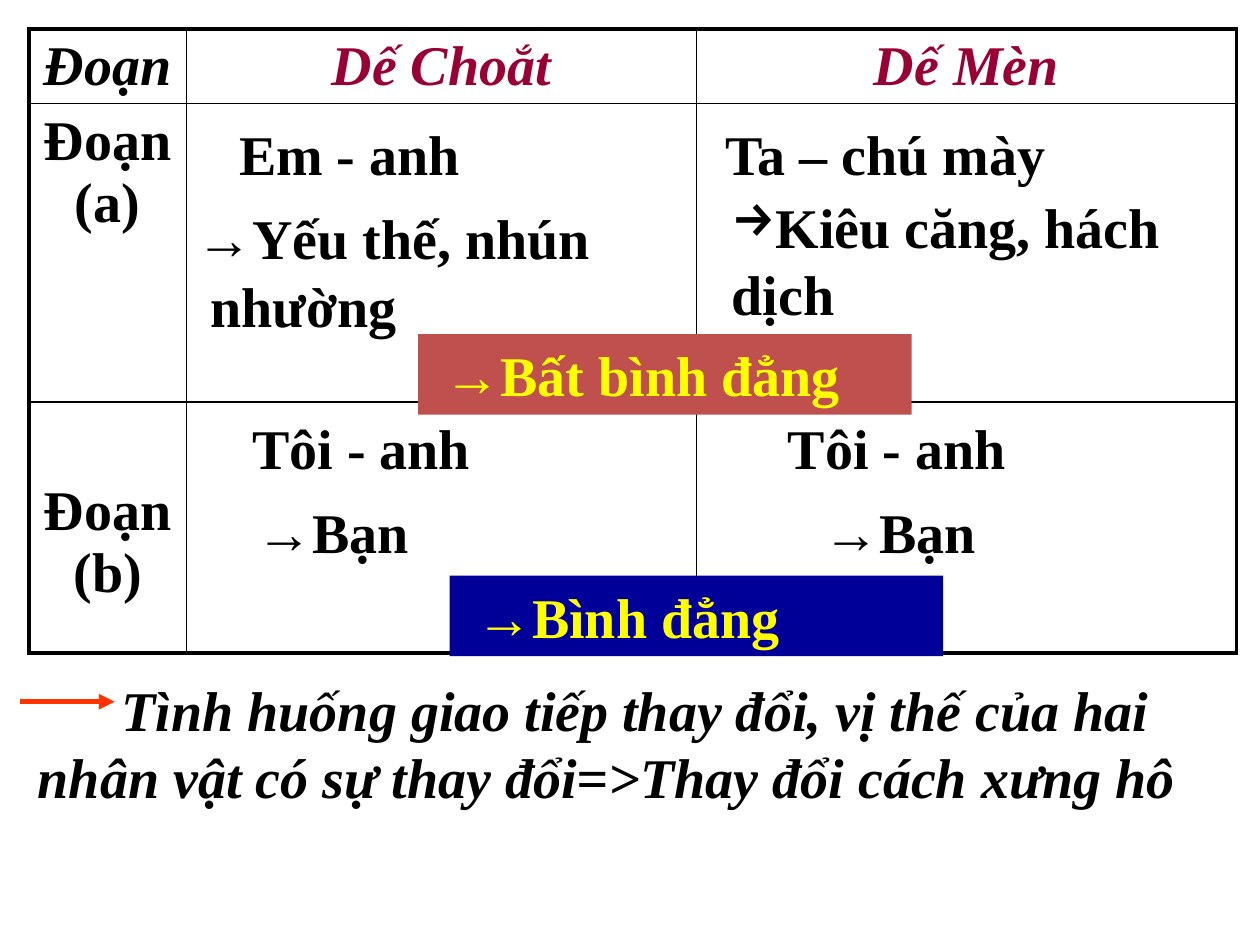
"""Build the slide comparing the forms of address of Dế Choắt and Dế Mèn."""
from lxml.etree import SubElement
from pptx import Presentation
from pptx.dml.color import RGBColor
from pptx.enum.shapes import MSO_CONNECTOR as Connector, MSO_SHAPE as Shape
from pptx.enum.text import MSO_AUTO_SIZE as AutoSize, PP_ALIGN as Align
from pptx.oxml.ns import qn
from pptx.util import Pt

COLORS = {"black": "000000", "maroon": "990033", "yellow": "FFFF00",
          "brick": "C0504D", "navy": "000099", "orange": "FF3300"}


def write(paragraph, text, color="black", italic=False, align=Align.LEFT, indent=0, bullet=None):
    properties = paragraph._p.get_or_add_pPr()
    properties.set("marL", "0")
    properties.set("indent", str(Pt(indent)))
    if bullet:
        SubElement(properties, qn("a:buChar")).set("char", bullet)
    paragraph.alignment = align
    run = paragraph.add_run()
    run.text = text
    run.font.name = "Times New Roman"
    run.font.size = Pt(32)
    run.font.bold = True
    run.font.italic = italic
    run.font.color.rgb = RGBColor.from_string(COLORS[color])


def fit(frame):
    frame.word_wrap = True
    frame.auto_size = AutoSize.SHAPE_TO_FIT_TEXT
    return frame.paragraphs[0]


deck = Presentation()
deck.slide_width, deck.slide_height = Pt(720), Pt(540)
slide = deck.slides.add_slide(deck.slide_layouts[6])
shapes = slide.shapes

widths = [90, 291.5, 308.5]
heights = [42.5, 170.5, 143.5]
comparison = shapes.add_table(3, 3, Pt(16.5), Pt(16.5), Pt(sum(widths)), Pt(sum(heights))).table
comparison.first_row = comparison.horz_banding = False
for column, width in zip(comparison.columns, widths):
    column.width = Pt(width)
for row, height in zip(comparison.rows, heights):
    row.height = Pt(height)

for r in range(3):
    for c in range(3):
        cell = comparison.cell(r, c)
        outer_sides = {"lnL": c == 0, "lnR": c == 2, "lnT": r == 0, "lnB": r == 2}
        for side, outer in outer_sides.items():
            border = SubElement(cell._tc.get_or_add_tcPr(), qn(f"a:{side}"), w=str(Pt(2.25 if outer else 1)))
            SubElement(SubElement(border, qn("a:solidFill")), qn("a:srgbClr")).set("val", COLORS["black"])
        cell.fill.background()

headings = [
    (0, 0, "Đoạn", "black", True), (0, 1, "Dế Choắt", "maroon", True), (0, 2, "Dế Mèn", "maroon", True),
    (1, 0, "Đoạn (a)", "black", False), (2, 0, "Đoạn (b)", "black", False),
]
for r, c, text, color, italic in headings:
    write(comparison.cell(r, c).text_frame.paragraphs[0], text, color=color, italic=italic, align=Align.CENTER)
comparison.cell(2, 0).margin_top = Pt(45)

notes = [
    (129.5, 65, 228, 46, "Em - anh", {}),
    (407.5, 65, 282, 46, "Ta – chú mày", {}),
    (411, 106.5, 318, 85, "Kiêu căng, hách dịch", {"bullet": "→"}),
    (29.5, 232.5, 354, 46, "Tôi - anh", {"align": Align.CENTER}),
    (425.5, 232.5, 174, 46, "Tôi - anh", {"align": Align.CENTER}),
    (107.5, 281, 150, 46, "→Bạn", {"indent": 32}),
    (431.5, 281, 162, 46, "→Bạn", {"indent": 32}),
    (14.5, 382.5, 720, 85,
     "Tình huống giao tiếp thay đổi, vị thế của hai nhân vật có sự thay đổi=>Thay đổi cách xưng hô",
     {"italic": True, "indent": 48}),
]
for left, top, width, height, text, style in notes:
    note = shapes.add_textbox(Pt(left), Pt(top), Pt(width), Pt(height))
    write(fit(note.text_frame), text, **style)

weakness = shapes.add_textbox(Pt(105), Pt(113), Pt(264), Pt(85)).text_frame
write(fit(weakness), "→Yếu thế, nhún")
write(weakness.add_paragraph(), "nhường", indent=8)

verdicts = [(239, 191, "→Bất bình đẳng", "brick"), (257, 329, "→Bình đẳng", "navy")]
for left, top, text, fill in verdicts:
    verdict = shapes.add_shape(Shape.RECTANGLE, Pt(left), Pt(top), Pt(282), Pt(46))
    verdict.shadow.inherit = False
    verdict.fill.solid()
    verdict.fill.fore_color.rgb = RGBColor.from_string(COLORS[fill])
    verdict.line.fill.background()
    write(fit(verdict.text_frame), text, color="yellow", indent=8)

arrow = shapes.add_connector(Connector.STRAIGHT, Pt(11.5), Pt(401), Pt(65.5), Pt(401))
arrow.line.color.rgb = RGBColor.from_string(COLORS["orange"])
arrow.line.width = Pt(3)
SubElement(arrow.line._get_or_add_ln(), qn("a:tailEnd"), type="triangle")
SubElement(arrow._element.spPr, qn("a:effectLst"))

deck.save("out.pptx")
